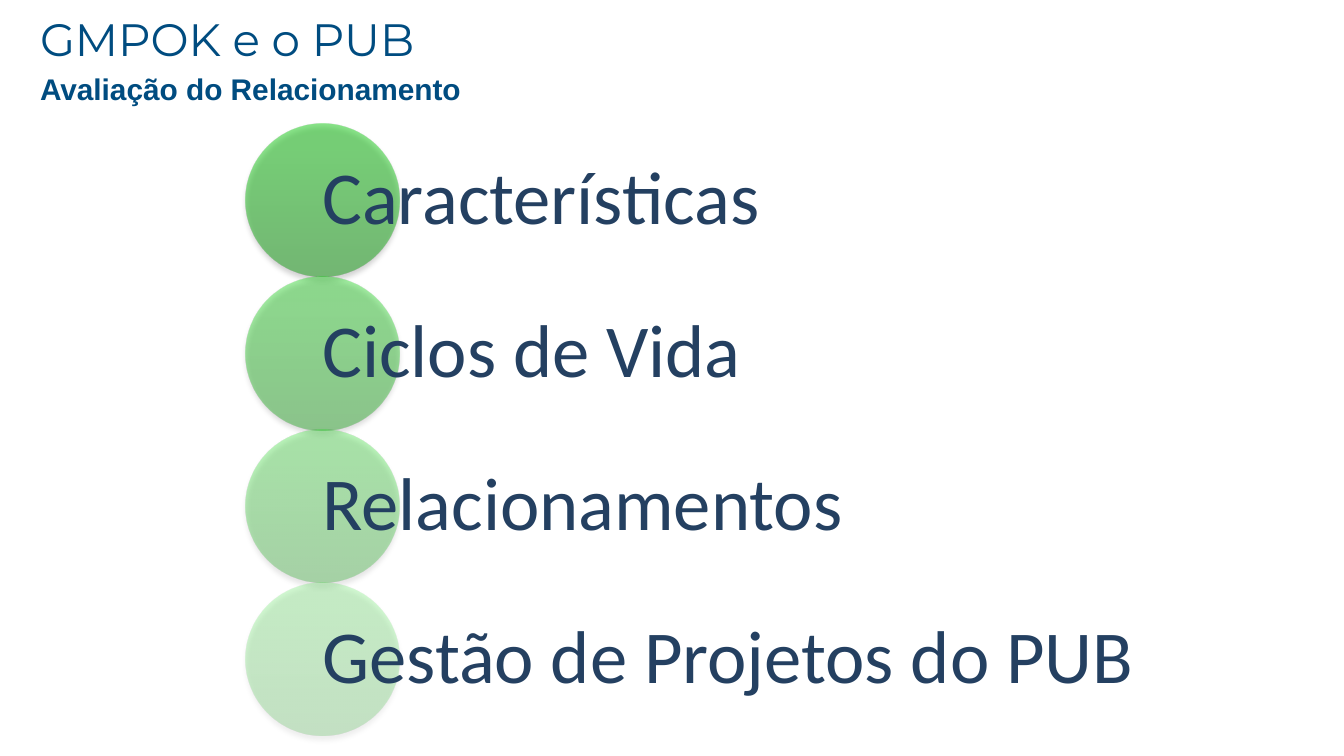
from dataclasses import dataclass

from lxml.etree import SubElement
from pptx import Presentation
from pptx.dml.color import RGBColor
from pptx.enum.shapes import MSO_SHAPE as Shape
from pptx.enum.text import MSO_ANCHOR as Anchor, MSO_AUTO_SIZE as AutoSize, PP_ALIGN as Align
from pptx.oxml.ns import qn
from pptx.util import Pt

TITLE = "GMPOK e o PUB"
SUBTITLE = "Avaliação do Relacionamento"
# Topic, opacity in percent, gradient colours from bottom to top
TOPICS = [
    ("Características", 50, ("139A13", "19C819", "15CC15")),
    ("Ciclos de Vida", 40, ("149F14", "1ACE1A", "17D317")),
    ("Relacionamentos", 30, ("15A415", "1BD51B", "18DA18")),
    ("Gestão de Projetos do PUB", 20, ("17A917", "1EDB1E", "1AE01A")),
]
STOPS = (0, 80, 100)


@dataclass(frozen=True)
class Theme:
    heading: str = "004C80"
    topic: str = "244061"
    shadow: str = "000000"
    title_size: float = 24.3
    subtitle_size: float = 16
    topic_size: float = 40


THEME = Theme()
PX = 914400 / 134.4
DIAMETER = 153
CIRCLE_LEFT, CIRCLE_TOP = 246, 124
TOPIC_WIDTH = 816


def px(*lengths):
    return [round(length * PX) for length in lengths]


def write(box, text, *, font, size, color, bold=False, margins=(13, 7), line_spacing=None):
    frame = box.text_frame
    frame.word_wrap = True
    frame.auto_size = AutoSize.NONE
    frame.vertical_anchor = Anchor.MIDDLE
    side, edge = px(*margins)
    frame.margin_left = frame.margin_right = side
    frame.margin_top = frame.margin_bottom = edge
    para = frame.paragraphs[0]
    para.alignment = Align.LEFT
    para.space_before = Pt(0)
    if line_spacing:
        para.line_spacing = line_spacing
    span = para.add_run()
    span.text = text
    span.font.name = font
    span.font.size = Pt(size)
    span.font.bold = bold
    span.font.color.rgb = RGBColor.from_string(color)


def add_color(parent, color, opacity):
    node = SubElement(parent, qn("a:srgbClr"), val=color)
    SubElement(node, qn("a:alpha"), val=str(opacity * 1000))


def add_circle(page, left, top, colors, opacity):
    circle = page.shapes.add_shape(Shape.OVAL, *px(left, top, DIAMETER, DIAMETER))
    circle.line.fill.background()
    circle.fill.gradient()
    circle.fill.gradient_angle = 90
    properties = circle.element.spPr
    stops = properties.find(".//" + qn("a:gsLst"))
    for stop in list(stops):
        stops.remove(stop)
    for position, color in zip(STOPS, colors):
        add_color(SubElement(stops, qn("a:gs"), pos=str(position * 1000)), color, opacity)

    circle.shadow.inherit = False
    shadow = SubElement(
        properties.find(qn("a:effectLst")), qn("a:outerShdw"),
        blurRad=str(Pt(3.1)), dist=str(Pt(1.8)), dir=str(90 * 60000), rotWithShape="0",
    )
    add_color(shadow, THEME.shadow, 35)


deck = Presentation()
deck.slide_width, deck.slide_height = px(1344, 756)
page = deck.slides.add_slide(deck.slide_layouts[5])

title = page.shapes.title
title.left, title.top, title.width, title.height = px(27, 15, 1111, 47)
write(title, TITLE, font="Montserrat", size=THEME.title_size, color=THEME.heading)

subtitle = page.shapes.add_textbox(*px(27, 71, 1111, 36))
write(subtitle, SUBTITLE, font="Arial", size=THEME.subtitle_size,
      color=THEME.heading, bold=True)

for row, (topic, opacity, colors) in enumerate(TOPICS):
    top = CIRCLE_TOP + row * DIAMETER
    add_circle(page, CIRCLE_LEFT, top, colors, opacity)
    label = page.shapes.add_textbox(
        *px(CIRCLE_LEFT + DIAMETER / 2, top, TOPIC_WIDTH, DIAMETER))
    write(label, topic, font="Calibri", size=THEME.topic_size, color=THEME.topic,
          margins=(0, 8), line_spacing=0.9)

deck.save("out.pptx")
